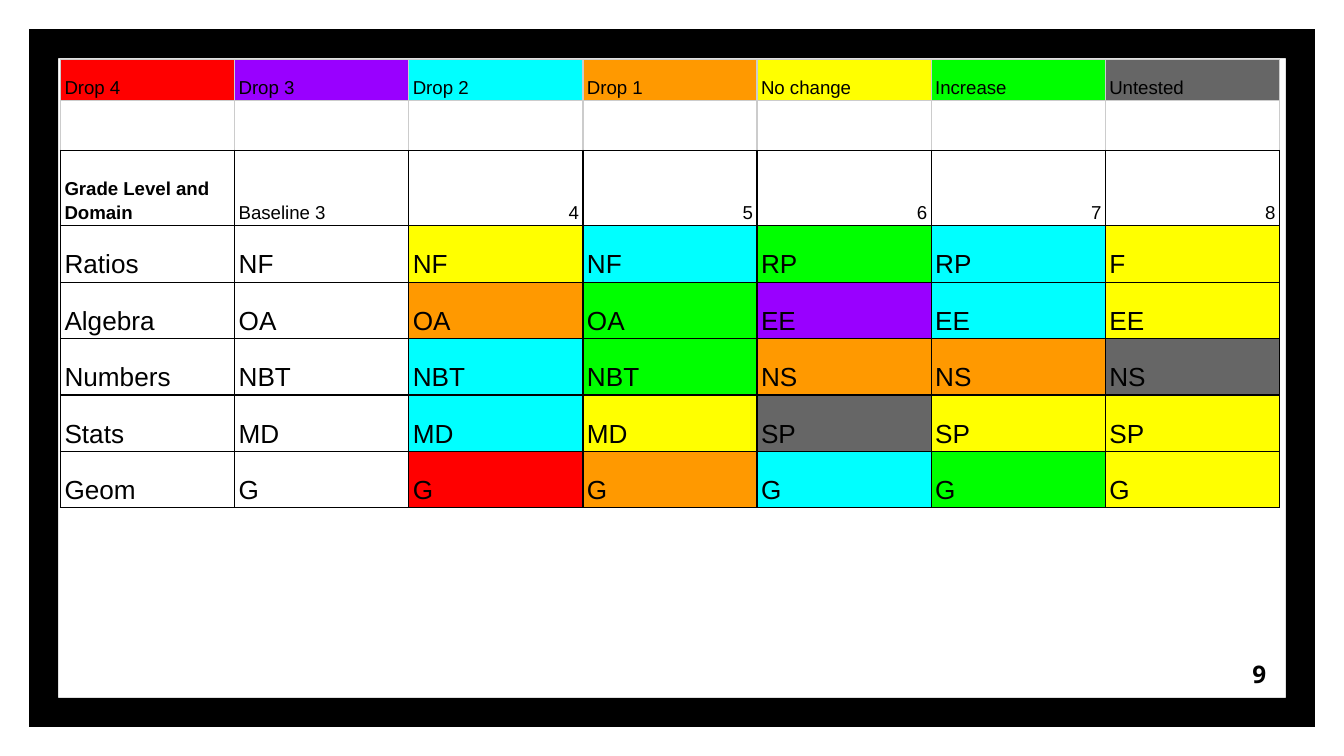
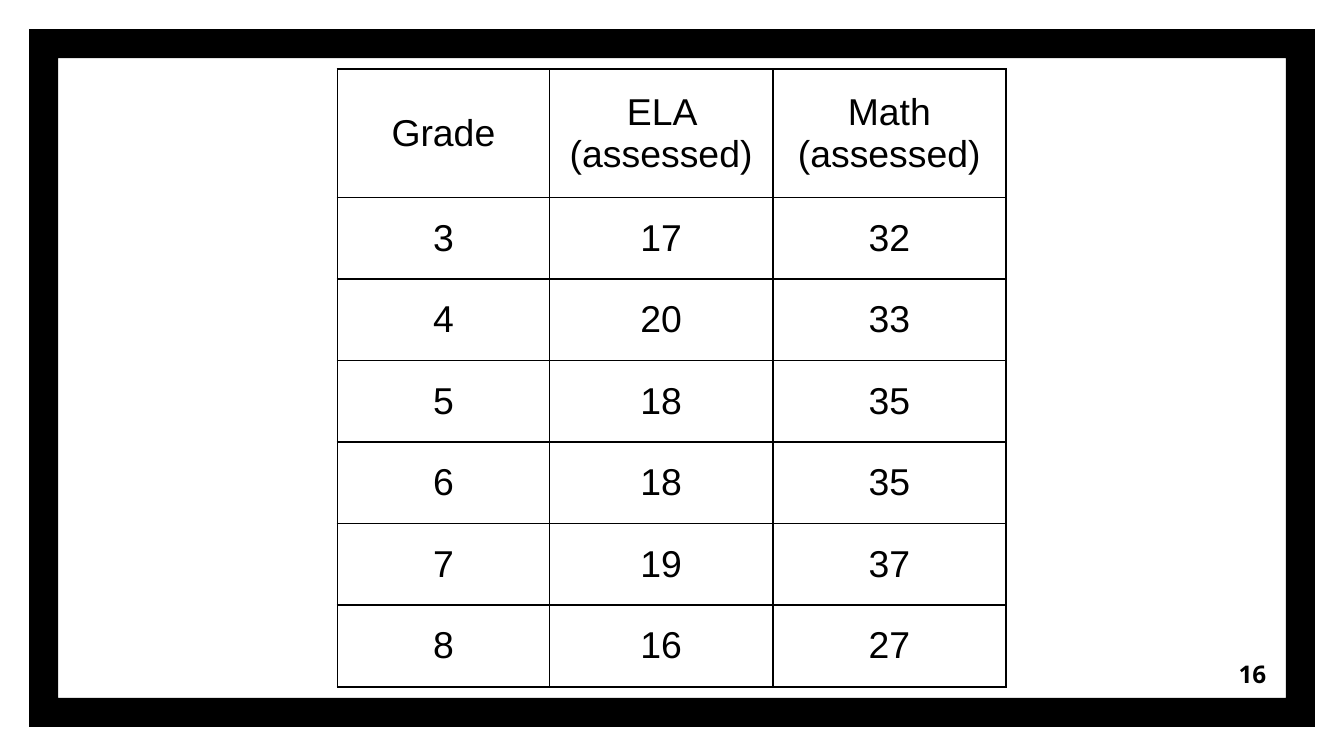
"""Build two framed slides: a domain growth heat map and a table of assessed pupils."""
from dataclasses import dataclass, field
from typing import Any

from lxml.etree import SubElement
from pptx import Presentation
from pptx.dml.color import RGBColor
from pptx.enum.shapes import MSO_SHAPE as Preset
from pptx.enum.text import MSO_ANCHOR as Anchor, PP_ALIGN as Align
from pptx.oxml.ns import qn
from pptx.util import Inches, Pt

UNIT = Inches(0.1)
GRID_COLUMNS, GRID_ROWS = 100, 56.25
FRAME_MARGIN = 2.17
FRAME_ADJUSTMENT = 0.0415
COLORS = {
    "black": "000000", "white": "FFFFFF", "pale": "CCCCCC",
    "Drop 4": "FF0000", "Drop 3": "9900FF", "Drop 2": "00FFFF", "Drop 1": "FF9900",
    "No change": "FFFF00", "Increase": "00FF00", "Untested": "666666",
}
LEGEND = ["Drop 4", "Drop 3", "Drop 2", "Drop 1", "No change", "Increase", "Untested"]
SMALL = {"name": "Arial", "size": Pt(10), "bold": False}
STRONG = SMALL | {"bold": True}
MEDIUM = SMALL | {"size": Pt(14)}
LARGE = SMALL | {"size": Pt(20)}
PAGE_NUMBER = {"name": "Noto Sans", "size": Pt(13), "bold": True}


@dataclass
class Cell:
    """One table cell with its look."""
    text: str = ""
    font: dict[str, Any] = field(default_factory=lambda: SMALL)
    fill: str | None = None
    align: Any = Align.LEFT
    edge: str = "black"
    bottom_edge: str = "black"


@dataclass
class Grid:
    """A table placed on the slide grid."""
    left: float
    top: float
    columns: list[float]
    rows: list[float]
    cells: list[list[Cell]]
    insets: tuple[float, float]
    anchor: Any
    line_width: float
    line_spacing: float


@dataclass
class Growth:
    """A domain with its code and change for each grade."""
    domain: str
    codes: list[str]
    changes: list[str]


GROWTH = [
    Growth("Ratios", ["NF", "NF", "NF", "RP", "RP", "F"],
           ["No change", "Drop 2", "Increase", "Drop 2", "No change"]),
    Growth("Algebra", ["OA", "OA", "OA", "EE", "EE", "EE"],
           ["Drop 1", "Increase", "Drop 3", "Drop 2", "No change"]),
    Growth("Numbers", ["NBT", "NBT", "NBT", "NS", "NS", "NS"],
           ["Drop 2", "Increase", "Drop 1", "Drop 1", "Untested"]),
    Growth("Stats", ["MD", "MD", "MD", "SP", "SP", "SP"],
           ["Drop 2", "No change", "Untested", "No change", "No change"]),
    Growth("Geom", ["G"] * 6,
           ["Drop 4", "Drop 1", "Drop 2", "Increase", "No change"]),
]
ASSESSED = [
    ["Grade", "ELA (assessed)", "Math (assessed)"],
    ["3", "17", "32"], ["4", "20", "33"], ["5", "18", "35"],
    ["6", "18", "35"], ["7", "19", "37"], ["8", "16", "27"],
]


def units(count: float) -> int:
    """Turn grid units into a length."""
    return round(count * UNIT)


def rgb(name: str) -> RGBColor:
    """Look up a colour by name."""
    return RGBColor.from_string(COLORS[name])


def apply(target: Any, values: dict[str, Any]) -> None:
    """Set attributes from a dict of format values."""
    for name, value in values.items():
        setattr(target, name, value)


def write(paragraph: Any, text: str, font: dict[str, Any]) -> None:
    """Add one formatted black run to a paragraph."""
    run = paragraph.add_run()
    run.text = text
    apply(run.font, font)
    run.font.color.rgb = rgb("black")


def draw_page(presentation: Any, number: str) -> Any:
    """Add a blank slide with the shared frame and page number."""
    slide = presentation.slides.add_slide(presentation.slide_layouts[6])
    slide.background.fill.solid()
    slide.background.fill.fore_color.rgb = rgb("white")
    frame = slide.shapes.add_shape(
        Preset.FRAME, units(FRAME_MARGIN), units(FRAME_MARGIN),
        units(GRID_COLUMNS - 2 * FRAME_MARGIN), units(GRID_ROWS - 2 * FRAME_MARGIN))
    frame.adjustments[0] = FRAME_ADJUSTMENT
    frame.shadow.inherit = False
    frame.fill.solid()
    frame.fill.fore_color.rgb = rgb("black")
    frame.line.fill.background()
    box = slide.shapes.add_textbox(units(89.2), units(48), units(6), units(4.3))
    apply(box.text_frame, {
        "word_wrap": True, "vertical_anchor": Anchor.MIDDLE,
        "margin_left": UNIT, "margin_right": UNIT, "margin_top": UNIT, "margin_bottom": UNIT})
    paragraph = box.text_frame.paragraphs[0]
    paragraph.alignment = Align.RIGHT
    write(paragraph, number, PAGE_NUMBER)
    return slide


def draw_borders(table_cell: Any, cell: Cell, width: float) -> None:
    """Put a solid line on each side of a cell."""
    properties = table_cell._tc.get_or_add_tcPr()
    edges = {"lnL": cell.edge, "lnR": cell.edge, "lnT": cell.edge, "lnB": cell.bottom_edge}
    for position, (tag, color) in enumerate(edges.items()):
        line = SubElement(properties, qn(f"a:{tag}"), w=str(Pt(width)))
        properties.insert(position, line)
        solid = SubElement(line, qn("a:solidFill"))
        SubElement(solid, qn("a:srgbClr"), val=COLORS[color])


def draw_cell(table_cell: Any, cell: Cell, grid: Grid) -> None:
    """Format and fill one table cell."""
    side, end = map(units, grid.insets)
    apply(table_cell, {
        "vertical_anchor": grid.anchor, "margin_left": side, "margin_right": side,
        "margin_top": end, "margin_bottom": end})
    if cell.fill:
        table_cell.fill.solid()
        table_cell.fill.fore_color.rgb = rgb(cell.fill)
    else:
        table_cell.fill.background()
    draw_borders(table_cell, cell, grid.line_width)
    paragraph = table_cell.text_frame.paragraphs[0]
    apply(paragraph, {"alignment": cell.align, "line_spacing": grid.line_spacing})
    if cell.text:
        write(paragraph, cell.text, cell.font)


def draw_table(slide: Any, grid: Grid) -> None:
    """Draw a whole table from its grid."""
    table = slide.shapes.add_table(
        len(grid.rows), len(grid.columns), units(grid.left), units(grid.top),
        units(sum(grid.columns)), units(sum(grid.rows))).table
    apply(table, {"first_row": False, "horz_banding": False})
    for column, width in zip(table.columns, grid.columns):
        column.width = units(width)
    for row, height, cells in zip(table.rows, grid.rows, grid.cells):
        row.height = units(height)
        for table_cell, cell in zip(row.cells, cells):
            draw_cell(table_cell, cell, grid)


def growth_grid() -> Grid:
    """Lay out the legend and the growth of each domain."""
    legend = [Cell(name, fill=name, edge="pale", bottom_edge="pale") for name in LEGEND]
    gap = [Cell(edge="pale") for _ in LEGEND]
    heading = [Cell("Grade Level and Domain", STRONG), Cell("Baseline 3", fill="white")]
    heading += [Cell(str(grade), align=Align.RIGHT) for grade in range(4, 9)]
    domains = [
        [Cell(growth.domain, MEDIUM)]
        + [Cell(code, MEDIUM, fill)
           for code, fill in zip(growth.codes, ["white", *growth.changes])]
        for growth in GROWTH]
    return Grid(4.5, 4.4, [12.96] * len(LEGEND), [3.1, 3.7, 5.6] + [4.2] * len(GROWTH),
                [legend, gap, heading, *domains], (0.3, 0.2), Anchor.BOTTOM, 0.75, 1.15)


def assessed_grid() -> Grid:
    """Lay out the number of pupils assessed in each grade."""
    cells = [[Cell(text, LARGE, align=Align.CENTER) for text in row] for row in ASSESSED]
    return Grid(25.1, 5.15, [15.8, 16.6, 17.35], [9.55] + [6.07] * (len(ASSESSED) - 1),
                cells, (0.7, 0.7), Anchor.MIDDLE, 1, 1.0)


def main() -> None:
    """Build and save the presentation."""
    presentation = Presentation()
    apply(presentation, {"slide_width": units(GRID_COLUMNS), "slide_height": units(GRID_ROWS)})
    for number, grid in {"9": growth_grid(), "16": assessed_grid()}.items():
        draw_table(draw_page(presentation, number), grid)
    presentation.save("out.pptx")


if __name__ == "__main__":
    main()
